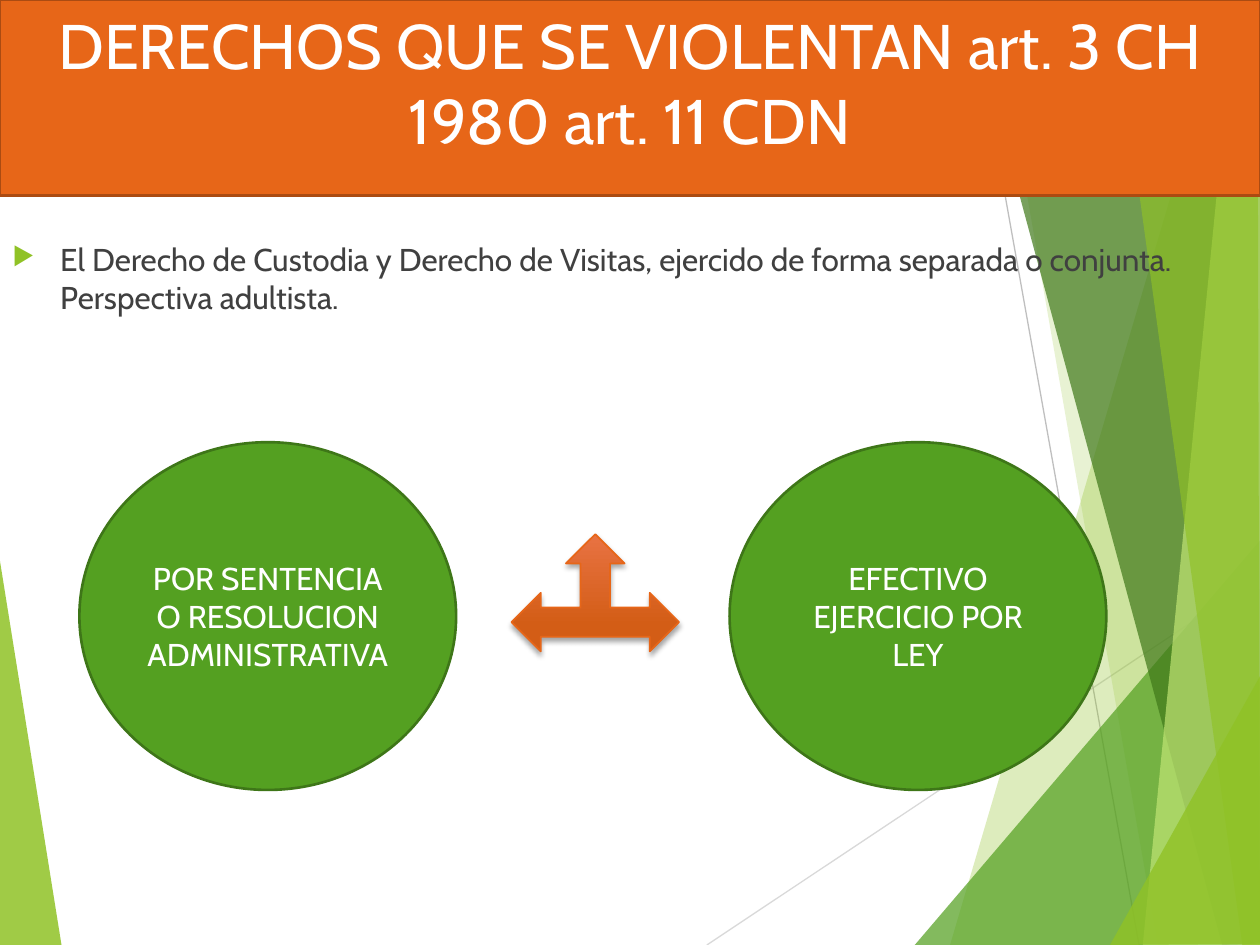
from dataclasses import dataclass

from lxml.etree import SubElement as Sub
from pptx import Presentation
from pptx.dml.color import RGBColor as Rgb
from pptx.enum.shapes import MSO_CONNECTOR as Conn, MSO_SHAPE as Kind
from pptx.enum.text import MSO_ANCHOR as Anchor, PP_ALIGN as Align
from pptx.oxml.ns import qn
from pptx.util import Emu, Pt

SCALE = 9144  # EMU per px, 100 px to the inch
WIDE, HIGH = 1000, 750


@dataclass(frozen=True)
class Theme:
    font: str = "Cabin"
    head: int = 36
    body: int = 18
    white: str = "FFFFFF"
    ink: str = "404040"
    lime: str = "90C226"
    pale: str = "C0E474"
    green: str = "54A021"
    dark: str = "3F7819"
    rim: str = "3E7618"
    orange: str = "E76618"
    rust: str = "AB4B12"
    glow: str = "E87242"
    ember: str = "D35D16"
    silver: str = "D9D9D9"
    grey: str = "BFBFBF"


def emu(*sizes):
    return [Emu(size * SCALE) for size in sizes]


def rgb(code):
    return Rgb.from_string(code)


class Deck:
    def __init__(self, theme):
        self.theme = theme
        self.prs = Presentation()
        self.prs.slide_width, self.prs.slide_height = emu(WIDE, HIGH)
        self.slide = self.prs.slides.add_slide(self.prs.slide_layouts[6])
        self.shapes = self.slide.shapes

    def facet(self, points, color, alpha):
        """Translucent polygon without an outline."""
        pen = self.shapes.build_freeform(*points[0], scale=SCALE)
        pen.add_line_segments(points[1:], close=True)
        item = pen.convert_to_shape()
        item.shadow.inherit = False
        item.fill.solid()
        item.fill.fore_color.rgb = rgb(color)
        item.line.fill.background()
        tint = item._element.spPr.find(qn("a:solidFill"))[0]
        Sub(tint, qn("a:alpha"), val=str(alpha * 1000))

    def line(self, start, end, color):
        item = self.shapes.add_connector(Conn.STRAIGHT, *emu(*start, *end))
        item.line.color.rgb = rgb(color)
        item.line.width = Pt(0.75)
        Sub(item._element.spPr, qn("a:effectLst"))

    def shape(self, kind, box, fill, edge, width=1.5):
        item = self.shapes.add_shape(kind, *emu(*box))
        item.shadow.inherit = False
        item.fill.solid()
        item.fill.fore_color.rgb = rgb(fill)
        item.line.color.rgb = rgb(edge)
        item.line.width = Pt(width)
        return item

    def label(self, item, text, size, color, align, anchor):
        frame = item.text_frame
        frame.word_wrap = True
        frame.vertical_anchor = anchor
        para = frame.paragraphs[0]
        para.alignment = align
        run = para.add_run()
        run.text = text
        run.font.name = self.theme.font
        run.font.size = Pt(size)
        run.font.color.rgb = rgb(color)
        return para

    def title(self, box, text):
        look = self.theme
        item = self.shape(Kind.RECTANGLE, box, look.orange, look.rust)
        self.label(item, text, look.head, look.white, Align.CENTER, Anchor.TOP)

    def oval(self, box, text):
        look = self.theme
        item = self.shape(Kind.OVAL, box, look.green, look.rim)
        self.label(item, text, look.body, look.white, Align.CENTER, Anchor.MIDDLE)

    def bullet(self, box, text):
        look = self.theme
        item = self.shapes.add_textbox(*emu(*box))
        para = self.label(item, text, look.body, look.ink, Align.LEFT, Anchor.TOP)
        para.space_before = Pt(10)
        props = para._p.get_or_add_pPr()
        indent = 38 * SCALE
        props.set("marL", str(indent))
        props.set("indent", str(-indent))
        Sub(Sub(props, qn("a:buClr")), qn("a:srgbClr"), val=look.lime)
        Sub(props, qn("a:buSzPct"), val="80000")
        Sub(props, qn("a:buChar"), char="▶")

    def arrow(self, box):
        """Three-way arrow with a gradient and a soft shadow."""
        look = self.theme
        item = self.shape(Kind.LEFT_RIGHT_UP_ARROW, box, look.glow, look.orange, 1)
        item.fill.gradient()
        item.fill.gradient_angle = 270
        stops = ((0, look.glow), (0.78, look.ember))
        for stop, (place, color) in zip(item.fill.gradient_stops, stops):
            stop.position = place
            stop.color.rgb = rgb(color)
        effects = item._element.spPr.find(qn("a:effectLst"))
        shade = Sub(effects, qn("a:outerShdw"), blurRad=str(Pt(3)),
                    dist=str(Pt(2)), dir="5400000", rotWithShape="0")
        tint = Sub(shade, qn("a:srgbClr"), val="000000")
        Sub(tint, qn("a:alpha"), val="35000")


def main():
    look = Theme()
    deck = Deck(look)

    # Backdrop: left wedge, two thin lines, then the right-hand facets
    deck.facet([(-1, 439), (49, 751), (-1, 750)], look.lime, 85)
    deck.line((561, 750), (1001, 457), look.silver)
    deck.line((770, 0), (904, 750), look.grey)
    facets = [
        ([(975, 0), (754, 750), (1002, 751), (1001, 1)], look.lime, 30),
        ([(788, -1), (919, 750), (1001, 750), (1001, -1)], look.lime, 20),
        ([(726, 750), (1000, 429), (1001, 750)], look.green, 72),
        ([(767, -1), (970, 750), (1001, 749), (1001, -1)], look.dark, 70),
        ([(981, -1), (907, 750), (1001, 750), (1000, -1)], look.pale, 70),
        ([(883, -1), (986, 750), (1000, 750), (998, -1)], look.lime, 65),
        ([(881, 750), (1001, 535), (1001, 749)], look.lime, 80),
    ]
    for points, color, alpha in facets:
        deck.facet(points, color, alpha)

    # Heading and statement
    deck.title((0, 0, WIDE, 155),
               "DERECHOS QUE SE VIOLENTAN art. 3 CH 1980 art. 11 CDN")
    deck.bullet((0, 186, WIDE, 564),
                "El Derecho de Custodia y Derecho de Visitas, ejercido de forma "
                "separada o conjunta. Perspectiva adultista.")

    # Two sources of the right, with the arrow between them
    deck.arrow((406, 424, 133, 93))
    ovals = ((63, "POR SENTENCIA O RESOLUCION ADMINISTRATIVA"),
             (579, "EFECTIVO EJERCICIO POR LEY"))
    for left, text in ovals:
        deck.oval((left, 351, 299, 276), text)

    deck.prs.save("out.pptx")


if __name__ == "__main__":
    main()
